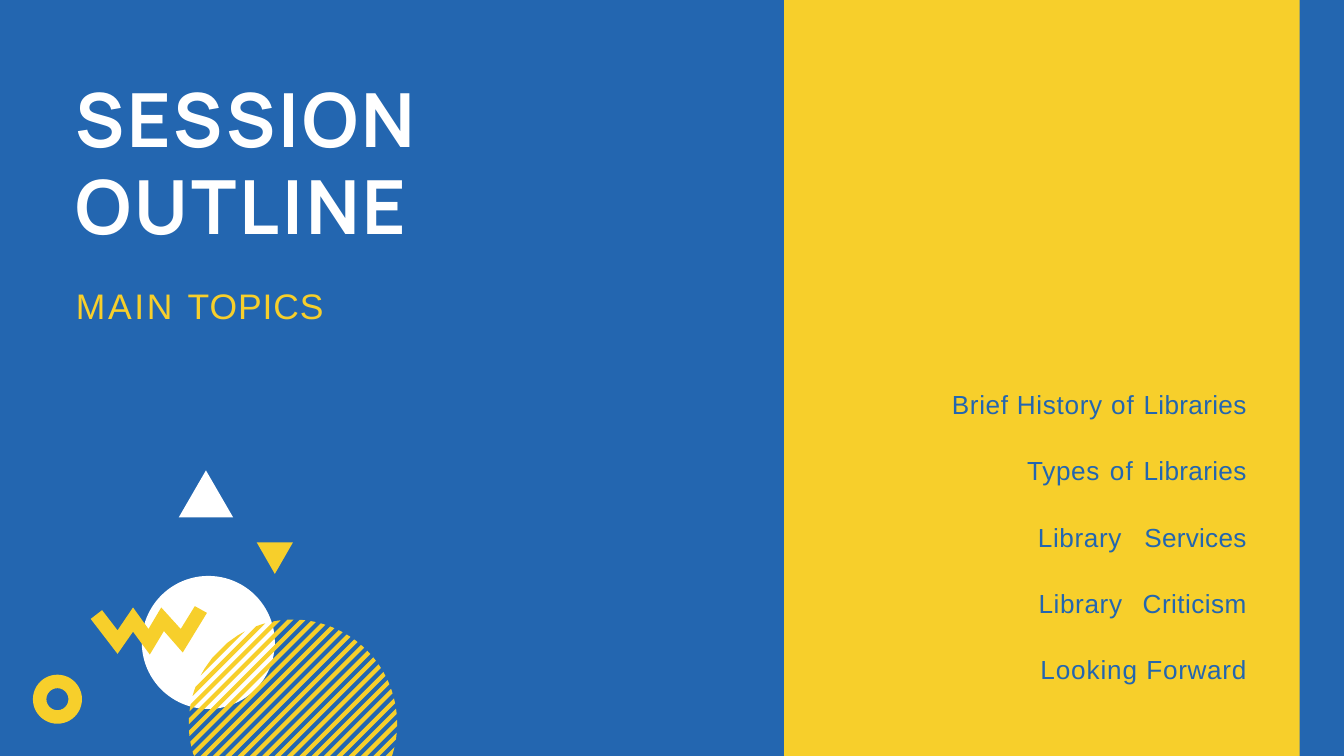
from math import sqrt

from lxml import etree
from pptx import Presentation
from pptx.dml.color import RGBColor
from pptx.enum.shapes import MSO_SHAPE
from pptx.enum.text import MSO_ANCHOR, MSO_AUTO_SIZE, PP_ALIGN
from pptx.oxml.ns import qn
from pptx.util import Inches, Pt

OVAL, DONUT = MSO_SHAPE.OVAL, MSO_SHAPE.DONUT
RECTANGLE, TRIANGLE = MSO_SHAPE.RECTANGLE, MSO_SHAPE.ISOSCELES_TRIANGLE
LEFT, RIGHT = PP_ALIGN.LEFT, PP_ALIGN.RIGHT

COLORS = {"blue": "2366B0", "yellow": "F7CF2B", "white": "FFFFFF"}
SLIDE_WIDTH, SLIDE_HEIGHT = 20, 11.25

TOPICS = [
    [("Brief ", 0.7), ("History ", 0.8), ("of ", 1.2), ("Libraries", 0.4)],
    [("Types", 0.8), (" ", 2.5), ("of", 1.2), (" ", 2.5), ("Libraries", 0.4)],
    [("Library", 0.7), (" ", 16), ("Services", 0.3)],
    [("Library", 0.7), (" ", 13.5), ("Criticism", 0.5)],
    [("Looking ", 1), ("Forward", 0.8)],
]
ZIGZAG = [
    (1.73, 0.1), (1.55, 0), (1.34, 0.34), (1.05, 0.02), (0.86, 0.34), (0.63, 0.02),
    (0.4, 0.36), (0.17, 0.06), (0, 0.19), (0.4, 0.71), (0.63, 0.38), (0.88, 0.72),
    (1.09, 0.37), (1.37, 0.69),
]


def color(name):
    """Return the named palette colour."""
    return RGBColor.from_string(COLORS[name])


def paint(shape, fill):
    """Give a shape a flat fill with no outline or shadow."""
    shape.fill.solid()
    shape.fill.fore_color.rgb = color(fill)
    shape.line.fill.background()
    shape.shadow.inherit = False
    return shape


def add_preset(slide, kind, box, fill):
    """Add a flat preset shape in the box."""
    return paint(slide.shapes.add_shape(kind, *map(Inches, box)), fill)


def add_outlines(slide, outlines, fill):
    """Add one freeform made of closed outlines given in inches."""
    outlines = [[(Inches(x), Inches(y)) for x, y in points] for points in outlines]
    builder = slide.shapes.build_freeform(*outlines[0][0])
    for number, points in enumerate(outlines):
        if number:
            builder.move_to(*points[0])
        builder.add_line_segments(points[1:], close=True)
    return paint(builder.convert_to_shape(), fill)


def place_text(shape, box):
    """Place a text shape and return its frame without margins."""
    shape.left, shape.top, shape.width, shape.height = map(Inches, box)
    frame = shape.text_frame
    frame.margin_left = frame.margin_right = frame.margin_top = frame.margin_bottom = 0
    frame.word_wrap = True
    frame.auto_size = MSO_AUTO_SIZE.NONE
    frame.vertical_anchor = MSO_ANCHOR.TOP
    return frame


def write(paragraph, runs, size, fill, font="Arial", alignment=LEFT):
    """Fill a paragraph with (text, letter spacing) runs in one font."""
    paragraph.alignment = alignment
    paragraph.font.name = font
    paragraph.font.size = Pt(size)
    paragraph.font.color.rgb = color(fill)
    for text, spacing in runs:
        run = paragraph.add_run()
        run.text = text
        run._r.get_or_add_rPr().set("spc", str(round(spacing * 100)))


def add_heading(slide, box):
    """Place the title and its subtitle in the box."""
    left, top, width, height = box
    frame = place_text(slide.shapes.title, (left, top, width, 2.66))
    frame.margin_top = Inches(0.06)
    paragraph = frame.paragraphs[0]
    write(paragraph, [("SESSION ", 3.1), ("OUTLINE", 3.2)], 80, "white", "Manrope")
    paragraph.font.bold = True
    paragraph.line_spacing = Pt(93.8)
    paragraph.space_before = Pt(4.1)

    subtitle = slide.shapes.add_textbox(0, 0, 0, 0)
    frame = place_text(subtitle, (left, top + height - 0.66, width, 0.66))
    frame.margin_top = Inches(0.02)
    write(frame.paragraphs[0], [("MAIN ", 2.8), ("TOPICS", 1)], 38, "yellow")


def add_topics(slide, box):
    """Draw the yellow band in the box with the topic list at its lower right."""
    left, top, width, height = box
    band = add_preset(slide, RECTANGLE, box, "yellow")
    slide.shapes._spTree.insert(2, band._element)

    list_box = (left + 2.45, top + 5.78, width - 3.24, 4.37)
    frame = place_text(slide.placeholders[1], list_box)
    for number, runs in enumerate(TOPICS):
        paragraph = frame.add_paragraph() if number else frame.paragraphs[0]
        write(paragraph, runs, 28, "blue", alignment=RIGHT)
        paragraph.line_spacing = 1.0
        paragraph.space_before = Pt(37.4 if number else 0)
        properties = paragraph._p.get_or_add_pPr()
        properties.set("marL", "0")
        properties.set("indent", "0")
        bullet = etree.Element(qn("a:buNone"))
        properties.find(qn("a:spcBef")).addnext(bullet)


def add_striped_disc(slide, center_x, center_y, radius):
    """Draw a disc of diagonal stripes, cut off at the foot of the slide."""
    first, last, count, thickness = -2.09, 1.95, 23, 0.09

    def chord(offset):
        """Return the lower and upper ends of the diagonal at this offset."""
        half = sqrt(max(0, radius**2 - offset**2 / 2)) / sqrt(2)
        ends = []
        for reach in (-half, half):
            y = min(center_y + offset / 2 - reach, SLIDE_HEIGHT)
            ends.append((center_x + center_y + offset - y, y))
        return ends

    stripes = []
    for number in range(count):
        outer = first + number * (last - first) / (count - 1)
        chords = [chord(outer - thickness * part) for part in (1, 0.5, 0)]
        lower, upper = zip(*chords)
        stripes.append(lower + upper[::-1])
    add_outlines(slide, stripes, "yellow")


def add_decoration(slide, box):
    """Draw the geometric ornaments in the box."""
    left, top, width, height = box
    ring = add_preset(slide, DONUT, (left, top + 3.04, 0.73, 0.73), "yellow")
    ring.adjustments[0] = 0.275
    add_preset(slide, TRIANGLE, (left + 2.17, top, 0.81, 0.7), "white")
    add_preset(slide, OVAL, (left + 1.62, top + 1.57, 1.98, 1.98), "white")
    pointer = add_preset(slide, TRIANGLE, (left + 3.33, top + 1.07, 0.54, 0.47), "yellow")
    pointer.rotation = 180
    zigzag = [(left + 0.86 + x, top + 2.02 + y) for x, y in ZIGZAG]
    add_outlines(slide, [zigzag], "yellow")
    radius = 1.55
    add_striped_disc(slide, left + width - radius, top + height - 0.48, radius)


def main():
    """Build the session outline slide."""
    presentation = Presentation()
    presentation.slide_width = Inches(SLIDE_WIDTH)
    presentation.slide_height = Inches(SLIDE_HEIGHT)
    slide = presentation.slides.add_slide(presentation.slide_layouts[1])
    slide.background.fill.solid()
    slide.background.fill.fore_color.rgb = color("blue")
    add_topics(slide, (11.67, 0, 7.67, SLIDE_HEIGHT))
    add_heading(slide, (1.13, 1.05, 5.26, 3.82))
    add_decoration(slide, (0.49, 7, 5.42, 4.25))
    presentation.save("out.pptx")


if __name__ == "__main__":
    main()
